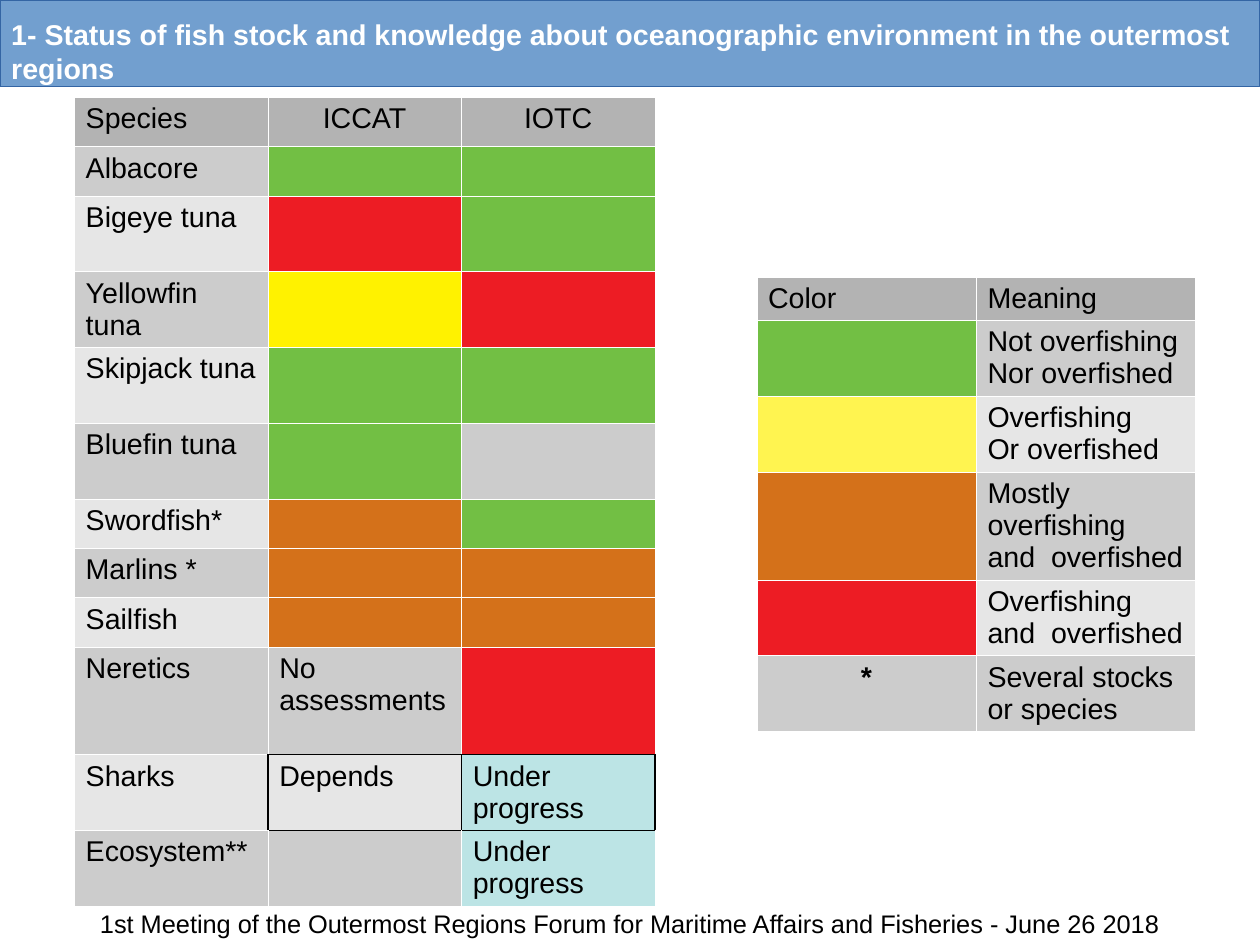
import pptx
import pptx.dml.color
import pptx.enum.shapes
import pptx.enum.text
import pptx.oxml
import pptx.oxml.ns
import pptx.util
from pptx.util import Inches

RGBColor = pptx.dml.color.RGBColor
ALIGN = pptx.enum.text.PP_ALIGN

BLACK = RGBColor(0x00, 0x00, 0x00)
WHITE = RGBColor(0xFF, 0xFF, 0xFF)
HEADER = RGBColor(0xB3, 0xB3, 0xB3)
GREY = RGBColor(0xCC, 0xCC, 0xCC)
PALE = RGBColor(0xE6, 0xE6, 0xE6)
GREEN = RGBColor(0x72, 0xBF, 0x44)
YELLOW = RGBColor(0xFF, 0xF2, 0x00)
LEGEND_YELLOW = RGBColor(0xFF, 0xF4, 0x50)
ORANGE = RGBColor(0xD4, 0x71, 0x1A)
RED = RGBColor(0xED, 0x1C, 0x24)
AQUA = RGBColor(0xBC, 0xE4, 0xE5)
BANNER = RGBColor(0x72, 0x9F, 0xCF)
BANNER_LINE = RGBColor(0x34, 0x65, 0xA4)

PAGE_WIDTH = Inches(28 / 2.54)
PAGE_HEIGHT = Inches(21 / 2.54)
SIDES = {"lnL": (0, -1), "lnR": (0, 1), "lnT": (-1, 0), "lnB": (1, 0)}

STOCK_HEIGHTS = [0.43, 0.43, 0.66, 0.66, 0.66, 0.66, 0.43, 0.43, 0.43, 0.94, 0.66, 0.66]
STOCKS = [
    [("Species", HEADER), ("ICCAT", HEADER), ("IOTC", HEADER)],
    [("Albacore", GREY), ("", GREEN), ("", GREEN)],
    [("Bigeye tuna", PALE), ("", RED), ("", GREEN)],
    [("Yellowfin tuna", GREY), ("", YELLOW), ("", RED)],
    [("Skipjack tuna", PALE), ("", GREEN), ("", GREEN)],
    [("Bluefin tuna", GREY), ("", GREEN), ("", GREY)],
    [("Swordfish*", PALE), ("", ORANGE), ("", GREEN)],
    [("Marlins *", GREY), ("", ORANGE), ("", ORANGE)],
    [("Sailfish", PALE), ("", ORANGE), ("", ORANGE)],
    [("Neretics", GREY), ("No assessments", GREY), ("", RED)],
    [("Sharks", PALE), ("Depends", PALE), ("Under progress", AQUA)],
    [("Ecosystem**", GREY), ("", GREY), ("Under progress", AQUA)],
]

LEGEND_HEIGHTS = [0.38, 0.66, 0.66, 0.94, 0.66, 0.66]
LEGEND = [
    [("Color", HEADER), ("Meaning", HEADER)],
    [("", GREEN), ("Not overfishing\nNor overfished", GREY)],
    [("", LEGEND_YELLOW), ("Overfishing\nOr overfished", PALE)],
    [("", ORANGE), ("Mostly overfishing\nand  overfished", GREY)],
    [("", RED), ("Overfishing\nand  overfished", PALE)],
    [("*", GREY), ("Several stocks or species", GREY)],
]


def write_text(frame, text, size=18, color=BLACK, bold=False, align=ALIGN.LEFT):
    """Fill a text frame and format all of its runs."""
    frame.text = text
    for para in frame.paragraphs:
        para.alignment = align
        para.font.size = pptx.util.Pt(size)
        for span in para.runs:
            span.font.name = "Arial"
            span.font.size = pptx.util.Pt(size)
            span.font.bold = bold
            span.font.color.rgb = color


def add_border(cell, side, color, points):
    """Draw one side of a table cell."""
    width = int(pptx.util.Pt(points))
    namespace = pptx.oxml.ns.nsdecls("a")
    cell._tc.get_or_add_tcPr().append(pptx.oxml.parse_xml(
        f'<a:{side} {namespace} w="{width}"><a:solidFill>'
        f'<a:srgbClr val="{color}"/></a:solidFill></a:{side}>'))


def add_grid(page, left, top, width, height, row_heights, rows, centred, boxed=()):
    """Add a coloured table, with black edges around the boxed cells."""
    columns = len(rows[0])
    stretch = height / sum(row_heights)
    table = page.shapes.add_table(
        len(rows), columns, Inches(left), Inches(top),
        Inches(width), Inches(height)).table
    table.first_row = False
    table.horz_banding = False
    for column in table.columns:
        column.width = Inches(width / columns)
    for r, (row_height, row) in enumerate(zip(row_heights, rows)):
        table.rows[r].height = Inches(row_height * stretch)
        for c, (text, fill) in enumerate(row):
            cell = table.cell(r, c)
            for side, (down, across) in SIDES.items():
                if (r, c) in boxed or (r + down, c + across) in boxed:
                    add_border(cell, side, BLACK, 1)
                else:
                    add_border(cell, side, WHITE, 0.06)
            cell.fill.solid()
            cell.fill.fore_color.rgb = fill
            align = ALIGN.CENTER if (r, c) in centred else ALIGN.LEFT
            write_text(cell.text_frame, text, bold=text == "*", align=align)


def add_banner(page):
    """Add the blue band behind the title."""
    banner = page.shapes.add_shape(
        pptx.enum.shapes.MSO_SHAPE.RECTANGLE, 0, 0, PAGE_WIDTH, Inches(0.76))
    banner.shadow.inherit = False
    banner.fill.solid()
    banner.fill.fore_color.rgb = BANNER
    banner.line.color.rgb = BANNER_LINE
    banner.line.width = pptx.util.Pt(0.75)


def add_label(page, top, width, height, text, **style):
    """Add a wrapped text box starting at the left edge."""
    box = page.shapes.add_textbox(0, Inches(top), width, Inches(height))
    box.text_frame.word_wrap = True
    write_text(box.text_frame, text, **style)


def main():
    """Build the fish stock status slide."""
    deck = pptx.Presentation()
    deck.slide_width = PAGE_WIDTH
    deck.slide_height = PAGE_HEIGHT
    page = deck.slides.add_slide(deck.slide_layouts[6])
    add_grid(page, 0.65, 0.85, 5.08, 7.08, STOCK_HEIGHTS, STOCKS,
             centred={(0, 1), (0, 2)}, boxed={(10, 1), (10, 2)})
    add_grid(page, 6.62, 2.42, 3.84, 3.98, LEGEND_HEIGHTS, LEGEND,
             centred={(5, 0)})
    add_banner(page)
    add_label(page, 0.1, Inches(11), 0.66,
              "1- Status of fish stock and knowledge about oceanographic "
              "environment in the outermost regions", color=WHITE, bold=True)
    add_label(page, 7.9, PAGE_WIDTH, 0.59,
              "1st Meeting of the Outermost Regions Forum for Maritime Affairs "
              "and Fisheries - June 26 2018", size=16, align=ALIGN.CENTER)
    deck.save("out.pptx")


if __name__ == "__main__":
    main()
